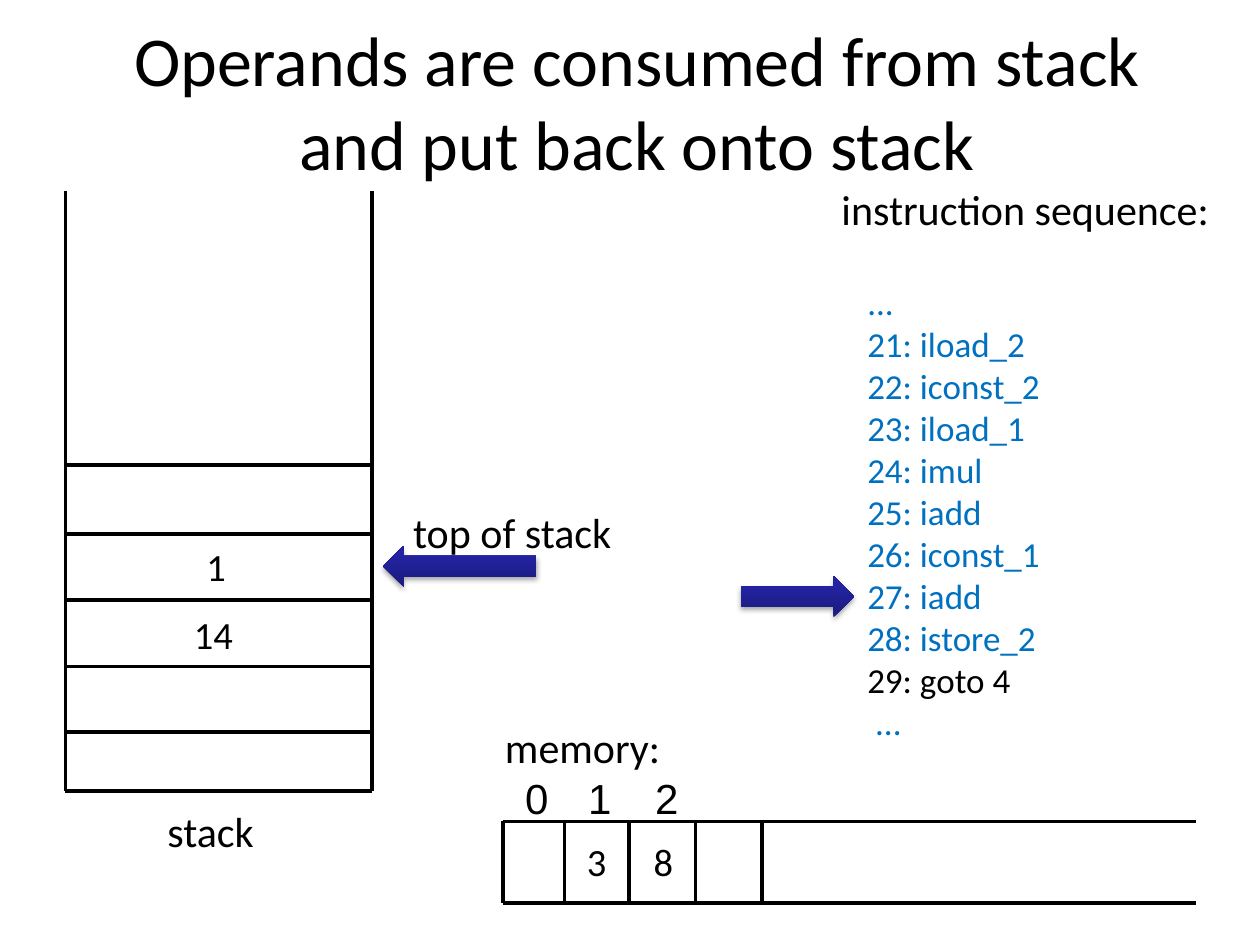
from dataclasses import dataclass
from lxml import etree
from pptx import Presentation
from pptx import util as u
from pptx.dml.color import RGBColor
from pptx.enum import shapes, text
from pptx.oxml import parse_xml
from pptx.oxml.ns import nsdecls, qn

PX = 9144  # one px is a hundredth of an inch


@dataclass(frozen=True)
class Theme:
    ink: str = "000000"
    code: str = "0070C0"
    blues: tuple = ((0, "1B1B7E"), (80, "2323A3"), (100, "2020A6"))
    font: str = "Calibri"
    digit: str = "Arial"
    title: int = 40
    label: int = 24
    value: int = 22
    step: int = 20
    line: float = 2.25


@dataclass(frozen=True)
class Label:
    text: str
    x: int
    y: int
    w: int
    h: int
    size: int
    font: str = "Calibri"


@dataclass(frozen=True)
class Arrow:
    x: int
    y: int
    w: int
    h: int
    flip: bool = False


T = Theme()


def style(font, size: int, color: str = T.ink, name: str = T.font) -> None:
    for key, val in {"size": u.Pt(size), "name": name}.items():
        setattr(font, key, val)
    font.color.rgb = RGBColor.from_string(color)


def place(shape, x: int, y: int, w: int, h: int) -> None:
    for key, val in {"left": x, "top": y, "width": w, "height": h}.items():
        setattr(shape, key, val * PX)


def setup(frame, **form) -> None:
    for key, val in form.items():
        setattr(frame, key, val)


def rule(slide, x1: int, y1: int, x2: int, y2: int) -> None:
    line = slide.shapes.add_connector(
        shapes.MSO_CONNECTOR.STRAIGHT, x1 * PX, y1 * PX, x2 * PX, y2 * PX)
    line.line.width = u.Pt(T.line)
    line.line.color.rgb = RGBColor.from_string(T.ink)
    etree.SubElement(line.element.spPr, qn("a:effectLst"))


def label(slide, item: Label) -> None:
    box = slide.shapes.add_textbox(
        item.x * PX, item.y * PX, item.w * PX, item.h * PX)
    setup(box.text_frame, word_wrap=False, text=item.text,
          auto_size=text.MSO_AUTO_SIZE.SHAPE_TO_FIT_TEXT)
    style(box.text_frame.paragraphs[0].runs[0].font, item.size, name=item.font)


def arrow(slide, item: Arrow) -> None:
    shape = slide.shapes.add_shape(
        shapes.MSO_SHAPE.RIGHT_ARROW,
        item.x * PX, item.y * PX, item.w * PX, item.h * PX)
    shape.line.fill.background()
    props = shape.element.spPr
    if item.flip:
        props.xfrm.set("flipH", "1")
    # Three-stop gradient and soft shadow
    stops = "".join(f'<a:gs pos="{pos * 1000}"><a:srgbClr val="{color}"/></a:gs>'
                    for pos, color in T.blues)
    props.find(qn("a:prstGeom")).addnext(parse_xml(
        f'<a:gradFill {nsdecls("a")} rotWithShape="1"><a:gsLst>{stops}</a:gsLst>'
        '<a:lin ang="16200000" scaled="0"/></a:gradFill>'))
    props.append(parse_xml(
        f'<a:effectLst {nsdecls("a")}><a:outerShdw blurRad="{u.Pt(3.1)}" '
        f'dist="{u.Pt(1.8)}" dir="5400000" rotWithShape="0">'
        f'<a:srgbClr val="{T.ink}"><a:alpha val="35000"/></a:srgbClr>'
        '</a:outerShdw></a:effectLst>'))


def listing(slide, steps: list[str]) -> None:
    box = slide.shapes.add_textbox(666 * PX, 216 * PX, 234 * PX, 380 * PX)
    frame = box.text_frame
    setup(frame, word_wrap=True, text="\n".join(steps),
          vertical_anchor=text.MSO_ANCHOR.MIDDLE,
          auto_size=text.MSO_AUTO_SIZE.SHAPE_TO_FIT_TEXT)
    for para in frame.paragraphs:
        color = T.ink if "goto" in para.text else T.code
        style(para.runs[0].font, T.step, color)
        para._p.get_or_add_pPr().set("marL", str(u.Pt(9)))
    para._p.get_or_add_pPr().set("marL", str(u.Pt(13.5)))


def main() -> None:
    deck = Presentation()
    deck.slide_width, deck.slide_height = u.Inches(10), u.Inches(7.5)
    slide = deck.slides.add_slide(deck.slide_layouts[5])

    # Title
    title = slide.shapes.title
    place(title, 28, 17, 955, 125)
    setup(title.text_frame, vertical_anchor=text.MSO_ANCHOR.MIDDLE,
          auto_size=text.MSO_AUTO_SIZE.NONE, word_wrap=True,
          text="Operands are consumed from stack\vand put back onto stack")
    para = title.text_frame.paragraphs[0]
    para.alignment = text.PP_ALIGN.CENTER
    for run in para.runs:
        style(run.font, T.title)

    # Instruction sequence
    arrow(slide, Arrow(588, 457, 90, 33))
    ops = ["iload_2", "iconst_2", "iload_1", "imul", "iadd",
           "iconst_1", "iadd", "istore_2", "goto 4"]
    listing(slide, ["...", *(f"{n}: {op}" for n, op in enumerate(ops, 21)), "..."])
    label(slide, Label("instruction sequence:", 658, 141, 315, 50, T.label))

    # Memory: two long rules and the cell walls
    for y in (652, 717):
        rule(slide, 399, y, 949, y)
    for x in (399, 448, 499, 552, 605):
        rule(slide, x, 652, x, 717)
    label(slide, Label("memory:", 391, 568, 144, 50, T.label))
    for n, x in enumerate((407, 457, 510)):
        label(slide, Label(str(n), x, 608, 39, 50, T.label, T.digit))
    for val, x in (("3", 456), ("8", 509)):
        label(slide, Label(val, x, 660, 36, 47, T.value))

    # Stack: open at the top, with cell floors
    for x in (52, 295):
        rule(slide, x, 152, x, 628)
    for y in (369, 424, 476, 529, 581, 628):
        rule(slide, 52, y, 295, y)
    arrow(slide, Arrow(304, 433, 122, 33, flip=True))
    for item in (Label("top of stack", 318, 397, 179, 50, T.label),
                 Label("stack", 123, 634, 89, 50, T.label),
                 Label("14", 144, 480, 51, 47, T.value),
                 Label("1", 154, 426, 36, 47, T.value)):
        label(slide, item)

    deck.save("out.pptx")


if __name__ == "__main__":
    main()
